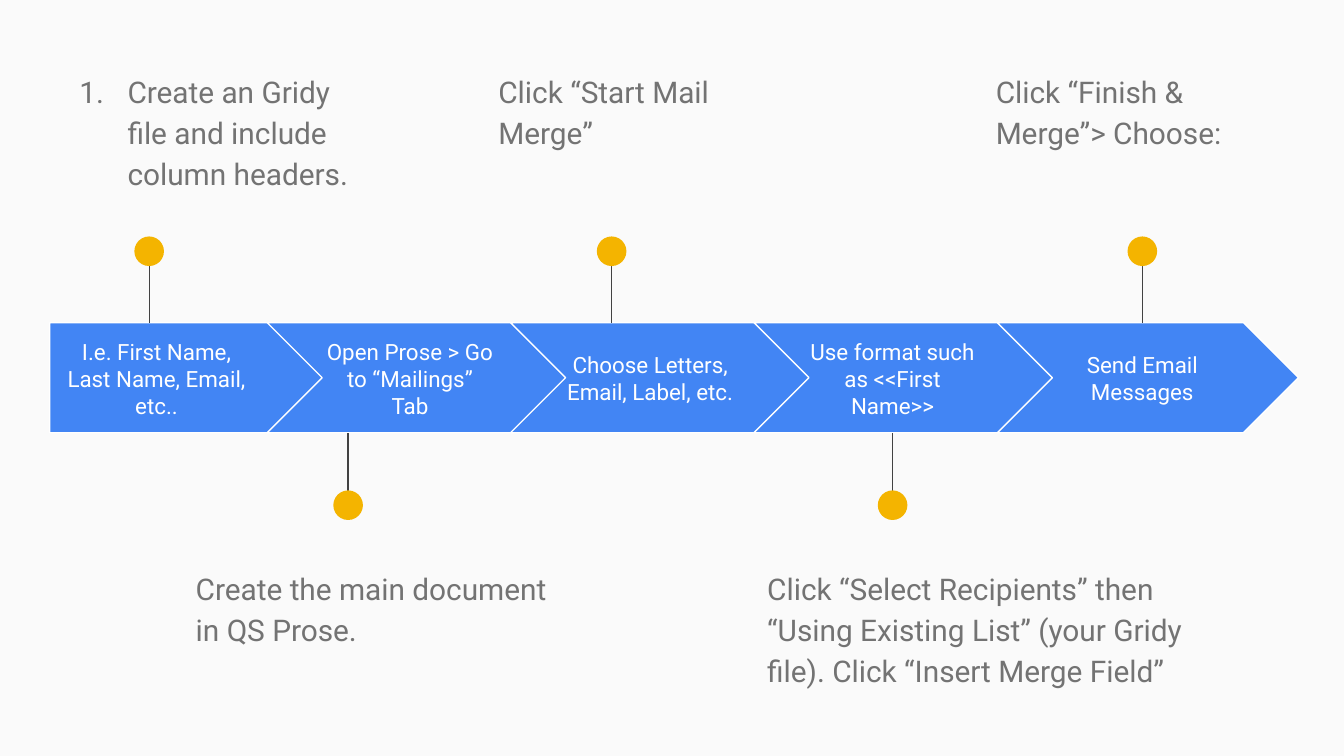
from lxml import etree
from pptx import Presentation
from pptx import util as u
from pptx.dml import color
from pptx.enum import shapes, text
from pptx.oxml import ns

BLUE, AMBER, WHITE, GREY, DARK = "4285F4", "F4B400", "FFFFFF", "737373", "424242"
BAND_TOP, BAND_HEIGHT = 6.1, 2.08
FIRST_LEFT, CHEVRON_LEFT, PITCH = 0.94, 5.05, 4.6
DOT = 0.56

STEPS = [
    ("I.e. First Name, Last Name, Email, etc..", (0.94, 4.04), 2.82,
     "Create an Gridy file and include column headers.", (0.89, 6.22)),
    ("Open Prose > Go to “Mailings” Tab", (5.92, 3.66), 6.58,
     "Create the main document in QS Prose.", (3.45, 7.14)),
    ("Choose Letters, Email, Label, etc.", (10.46, 3.66), 11.56,
     "Click “Start Mail Merge”", (9.17, 6.22)),
    ("Use format such as <<First Name>>", (15.04, 3.66), 16.87,
     "Click “Select Recipients” then “Using Existing List” (your Gridy file). "
     "Click “Insert Merge Field”", (14.25, 9.04)),
    ("Send Email Messages", (19.76, 3.66), 21.59,
     "Click “Finish & Merge”> Choose:", (18.57, 6.22)),
]


def rgb(value):
    """Turn a hex string into a colour."""
    return color.RGBColor.from_string(value)


def place(shape, box):
    """Move a shape to a box of left, top, width and height in centimetres."""
    shape.left, shape.top, shape.width, shape.height = map(u.Cm, box)


def write(shape, content, size=16, colour=GREY, spacing=1.15,
          align=text.PP_ALIGN.LEFT, anchor=text.MSO_ANCHOR.TOP):
    """Write one formatted paragraph into a shape and return the paragraph."""
    frame = shape.text_frame
    frame.word_wrap = True
    frame.auto_size = text.MSO_AUTO_SIZE.NONE
    frame.vertical_anchor = anchor
    frame.margin_left = frame.margin_right = u.Cm(0.25)
    frame.margin_top = frame.margin_bottom = u.Cm(0.25)
    paragraph = frame.paragraphs[0]
    paragraph.alignment = align
    paragraph.line_spacing = spacing
    paragraph.space_before = u.Pt(0)
    run = paragraph.add_run()
    run.text = content
    run.font.name = "Roboto"
    run.font.size = u.Pt(size)
    run.font.color.rgb = rgb(colour)
    return paragraph


def number(paragraph):
    """Give a paragraph an automatic number and a hanging indent."""
    properties = paragraph._p.get_or_add_pPr()
    properties.set("marL", str(u.Cm(1.27)))
    properties.set("indent", str(u.Cm(-0.91)))
    bullet_colour = etree.SubElement(properties, ns.qn("a:buClr"))
    etree.SubElement(bullet_colour, ns.qn("a:srgbClr"), val=GREY)
    etree.SubElement(properties, ns.qn("a:buFont"), typeface="Roboto")
    etree.SubElement(properties, ns.qn("a:buAutoNum"), type="arabicPeriod")


def add_filled(slide, kind, box, fill, outline=None):
    """Add a flat filled preset shape, with a thin outline if one is given."""
    shape = slide.shapes.add_shape(kind, *map(u.Cm, box))
    shape.shadow.inherit = False
    shape.fill.solid()
    shape.fill.fore_color.rgb = rgb(fill)
    if outline:
        shape.line.color.rgb = rgb(outline)
        shape.line.width = u.Pt(0.75)
    else:
        shape.line.fill.background()


def add_arrow(slide, kind, box, label, label_left, label_width):
    """Add one arrow of the band and its centred label."""
    add_filled(slide, kind, box, BLUE, WHITE)
    label_box = (label_left, box[1] + 0.4, label_width, box[3] - 0.78)
    shape = slide.shapes.add_textbox(*map(u.Cm, label_box))
    write(shape, label, size=12, colour=WHITE, spacing=1.0,
          align=text.PP_ALIGN.CENTER, anchor=text.MSO_ANCHOR.MIDDLE)


def add_pin(slide, centre, dot_top, band_edge):
    """Add a dot joined to the edge of the band by a line."""
    line = slide.shapes.add_connector(
        shapes.MSO_CONNECTOR.STRAIGHT, u.Cm(centre), u.Cm(dot_top + DOT / 2),
        u.Cm(centre), u.Cm(band_edge))
    line.line.color.rgb = rgb(DARK)
    line.line.width = u.Pt(0.75)
    etree.SubElement(line._element.spPr, ns.qn("a:effectLst"))
    add_filled(slide, shapes.MSO_SHAPE.OVAL,
               (centre - DOT / 2, dot_top, DOT, DOT), AMBER)


def add_process(slide):
    """Add the band of steps with pins and notes alternating above and below."""
    for index, (label, label_span, centre, note, note_span) in enumerate(STEPS):
        first, above = index == 0, index % 2 == 0
        if first:
            kind, left, width = shapes.MSO_SHAPE.PENTAGON, FIRST_LEFT, 5.21
        else:
            kind, width = shapes.MSO_SHAPE.CHEVRON, 5.69
            left = CHEVRON_LEFT + PITCH * (index - 1)
        add_arrow(slide, kind, (left, BAND_TOP, width, BAND_HEIGHT), label, *label_span)
        if above:
            add_pin(slide, centre, 4.47, BAND_TOP)
        else:
            add_pin(slide, centre, 9.27, BAND_TOP + BAND_HEIGHT)
        note_left, note_width = note_span
        note_box = (note_left, 1.04 if above else 10.44, note_width, 3.25)
        if first:
            shape = slide.placeholders[1]
            place(shape, note_box)
            number(write(shape, note))
        else:
            write(slide.shapes.add_textbox(*map(u.Cm, note_box)), note)


def main():
    """Build the presentation and save it."""
    presentation = Presentation()
    presentation.slide_width, presentation.slide_height = u.Cm(25.4), u.Cm(14.29)
    slide = presentation.slides.add_slide(presentation.slide_layouts[1])
    title = slide.shapes.title._element
    title.getparent().remove(title)
    slide.background.fill.solid()
    slide.background.fill.fore_color.rgb = rgb("FAFAFA")
    add_process(slide)
    presentation.save("out.pptx")


if __name__ == "__main__":
    main()
